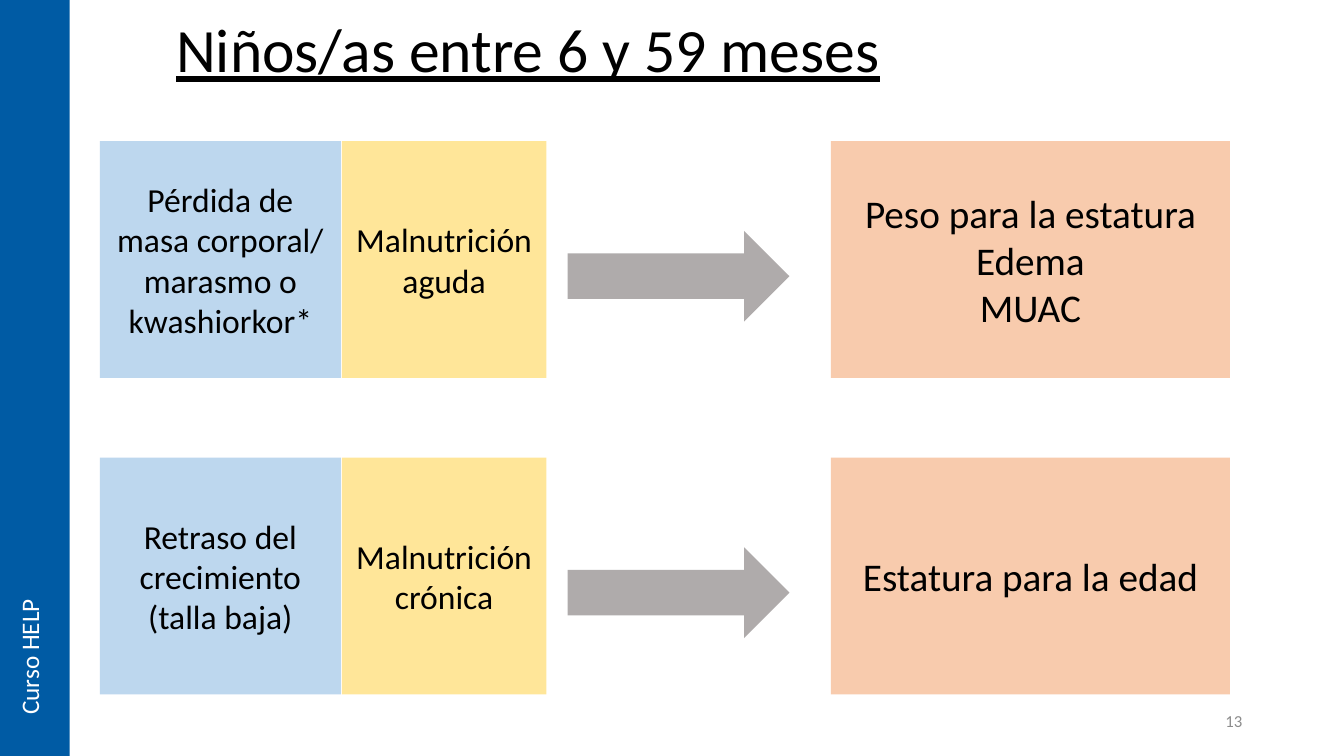
from pptx import Presentation
from pptx.dml.color import RGBColor
from pptx.enum.shapes import MSO_SHAPE as Shape
from pptx.enum.text import MSO_ANCHOR as Anchor, PP_ALIGN as Align
from pptx.util import Inches, Pt

BLUE = RGBColor(0x00, 0x5B, 0xA4)
LIGHT_BLUE = RGBColor(0xBD, 0xD7, 0xEE)
YELLOW = RGBColor(0xFF, 0xE6, 0x99)
PEACH = RGBColor(0xF8, 0xCB, 0xAD)
GRAY = RGBColor(0xAF, 0xAB, 0xAB)
NUMBER_GRAY = RGBColor(0x8C, 0x8C, 0x8C)
BLACK = RGBColor(0, 0, 0)
WHITE = RGBColor(0xFF, 0xFF, 0xFF)

WIDTH, HEIGHT = 13.33, 7.5
ROW_TOP, ROW_PITCH, ROW_HEIGHT = 1.4, 3.14, 2.35
ARROW_HEIGHT, ARROW_DROP = 0.9, 0.89
CONDITION, TYPE, ARROW, MEASURE = (0.99, 2.39), (3.39, 2.03), (5.63, 2.2), (8.24, 3.96)

ROWS = [
    (["Pérdida de masa corporal/", "marasmo o kwashiorkor*"],
     ["Malnutrición", "aguda"],
     ["Peso para la estatura", "Edema", "MUAC"]),
    (["Retraso del crecimiento", "(talla baja)"],
     ["Malnutrición", "crónica"],
     ["Estatura para la edad"]),
]


def write(frame, lines, size, color=BLACK, align=Align.CENTER, anchor=Anchor.MIDDLE,
          wrap=True, spacing=None, underline=None):
    """Fill a text frame with one paragraph per line."""
    frame.word_wrap = wrap
    frame.vertical_anchor = anchor
    font_format = {"name": "Calibri", "size": Pt(size), "underline": underline}
    for index, line in enumerate(lines):
        paragraph = frame.add_paragraph() if index else frame.paragraphs[0]
        paragraph.alignment = align
        paragraph.line_spacing = spacing
        run = paragraph.add_run()
        run.text = line
        for attribute, value in font_format.items():
            setattr(run.font, attribute, value)
        run.font.color.rgb = color


def add_block(slide, kind, column, top, height, color):
    """Add a flat filled shape in a column given as left and width."""
    left, width = column
    block = slide.shapes.add_shape(kind, *map(Inches, (left, top, width, height)))
    block.shadow.inherit = False
    block.fill.solid()
    block.fill.fore_color.rgb = color
    block.line.fill.background()
    return block


def add_label(slide, box, text, size, **style):
    """Add a one-line text box."""
    label = slide.shapes.add_textbox(*map(Inches, box))
    write(label.text_frame, [text], size, **style)
    return label


def add_row(slide, top, condition, malnutrition, measures):
    """Add a condition, its type, an arrow and its measures."""
    cells = [(CONDITION, LIGHT_BLUE, condition, 24),
             (TYPE, YELLOW, malnutrition, 24),
             (MEASURE, PEACH, measures, 28)]
    for column, color, lines, size in cells:
        block = add_block(slide, Shape.RECTANGLE, column, top, ROW_HEIGHT, color)
        write(block.text_frame, lines, size)
    add_block(slide, Shape.RIGHT_ARROW, ARROW, top + ARROW_DROP, ARROW_HEIGHT, GRAY)


def main():
    """Build and save the slide."""
    deck = Presentation()
    deck.slide_width, deck.slide_height = Inches(WIDTH), Inches(HEIGHT)
    slide = deck.slides.add_slide(deck.slide_layouts[6])

    add_block(slide, Shape.RECTANGLE, (0, 0.69), 0, HEIGHT, BLUE)
    course = add_label(slide, (0.09, 5.61, 0.5, 1.58), "Curso HELP", 18, color=WHITE,
                       align=Align.LEFT, anchor=Anchor.TOP, wrap=False)
    course.text_frame._txBody.bodyPr.set("vert", "vert270")
    add_label(slide, (0.99, 0, 8.5, 0.9), "Niños/as entre 6 y 59 meses", 44,
              anchor=Anchor.BOTTOM, spacing=0.9, underline=True)
    for index, row in enumerate(ROWS):
        add_row(slide, ROW_TOP + index * ROW_PITCH, *row)
    add_label(slide, (9.42, 6.95, 3, 0.4), "13", 12, color=NUMBER_GRAY, align=Align.RIGHT)
    deck.save("out.pptx")


if __name__ == "__main__":
    main()
